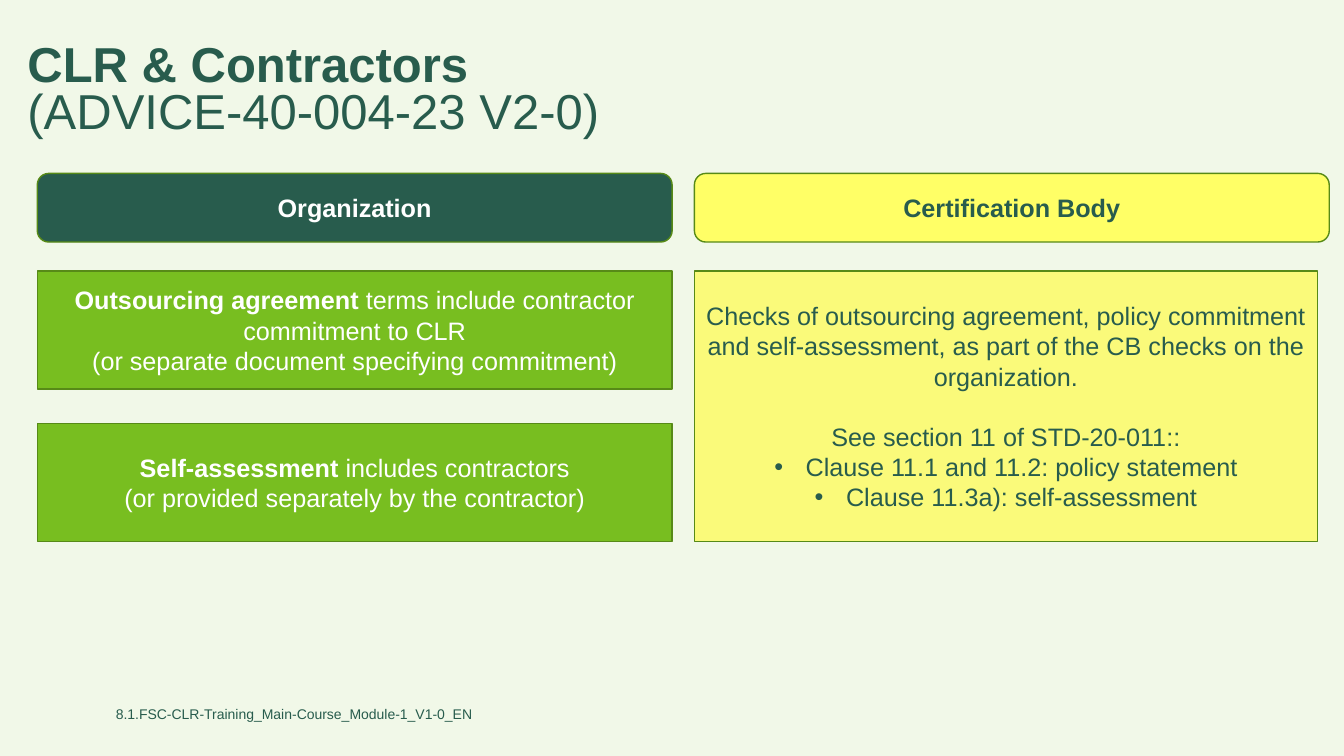
from dataclasses import dataclass

from lxml import etree
from pptx import Presentation
from pptx.dml.color import RGBColor
from pptx.enum.shapes import MSO_SHAPE
from pptx.enum.text import MSO_ANCHOR, MSO_AUTO_SIZE, PP_ALIGN
from pptx.oxml.ns import qn
from pptx.util import Cm, Pt

RECT, ROUNDED = MSO_SHAPE.RECTANGLE, MSO_SHAPE.ROUNDED_RECTANGLE
LEFT, CENTER = PP_ALIGN.LEFT, PP_ALIGN.CENTER
TOP, MIDDLE = MSO_ANCHOR.TOP, MSO_ANCHOR.MIDDLE
NO_AUTOFIT = MSO_AUTO_SIZE.NONE


@dataclass(frozen=True)
class Theme:
    font: str = "Arial"
    background: str = "F1F8E8"
    dark: str = "285C4D"
    white: str = "FFFFFF"
    green: str = "78BE20"
    yellow: str = "FFFF66"
    pale_yellow: str = "FAFA7A"
    outline: str = "578A17"
    title_size: float = 35
    body_size: float = 18
    footer_size: float = 10


@dataclass(frozen=True)
class Run:
    text: str
    bold: bool = False
    new_line: bool = False


@dataclass(frozen=True)
class Para:
    runs: tuple[Run, ...]
    bullet: bool = False
    space_before: float = 0


@dataclass(frozen=True)
class Box:
    kind: MSO_SHAPE
    left: float
    top: float
    height: float
    fill: str
    color: str
    paras: tuple[Para, ...]


THEME = Theme()

# Grid in centimetres
LEFT_COL, RIGHT_COL = 0.94, 17.5
COL_W, CHECKS_W = 16, 15.7
HEADER_TOP, HEADER_H = 4.37, 1.73
ROW_TOP, ROW_H, ROW_PITCH = 6.83, 2.97, 3.84
HANG = 0.79

TITLE = (Para((Run("CLR & Contractors", bold=True),
               Run("(ADVICE-40-004-23 V2-0)", new_line=True))),)
FOOTER = (Para((Run("8.1.FSC-CLR-Training_Main-Course_Module-1_V1-0_EN"),)),)

HEADERS = (
    Box(ROUNDED, LEFT_COL, HEADER_TOP, HEADER_H, THEME.dark, THEME.white,
        (Para((Run("Organization", bold=True),)),)),
    Box(ROUNDED, RIGHT_COL, HEADER_TOP, HEADER_H, THEME.yellow, THEME.dark,
        (Para((Run("Certification Body", bold=True),)),)),
)

DUTIES = (
    (Para((Run("Outsourcing agreement ", bold=True),
           Run("terms include contractor commitment to CLR"))),
     Para((Run("(or separate document specifying commitment)"),))),
    (Para((Run("Self-assessment", bold=True),
           Run(" includes contractors"),
           Run("(or provided separately by the contractor)", new_line=True))),),
)
DUTY_BOXES = tuple(
    Box(RECT, LEFT_COL, ROW_TOP + i * ROW_PITCH, ROW_H, THEME.green, THEME.white, paras)
    for i, paras in enumerate(DUTIES)
)

CHECKS = (
    Para((Run("Checks of outsourcing agreement, policy commitment and self-assessment, "
              "as part of the CB checks on the organization."),)),
    Para((Run("See section 11 of STD-20-011::"),), space_before=21.6),
    Para((Run("Clause 11.1 and 11.2: policy statement"),), bullet=True),
    Para((Run("Clause 11.3a): self-assessment"),), bullet=True),
)


def rgb(color: str) -> RGBColor:
    return RGBColor.from_string(color)


def place(sp, left: float, top: float, width: float, height: float) -> None:
    sp.left, sp.top, sp.width, sp.height = Cm(left), Cm(top), Cm(width), Cm(height)


def paint(sp, fill: str) -> None:
    sp.fill.solid()
    sp.fill.fore_color.rgb = rgb(fill)
    sp.line.color.rgb = rgb(THEME.outline)
    sp.line.width = Pt(1)


def set_bullet(p, bullet: bool, color: str) -> None:
    """Give the paragraph a hanging bullet, or clear any inherited one."""
    pPr = p._p.get_or_add_pPr()
    indent = Cm(HANG) if bullet else 0
    pPr.set("marL", str(indent))
    pPr.set("indent", str(-indent))
    if bullet:
        clr = etree.SubElement(pPr, qn("a:buClr"))
        etree.SubElement(clr, qn("a:srgbClr"), val=color)
        etree.SubElement(pPr, qn("a:buFont"), typeface=THEME.font)
        etree.SubElement(pPr, qn("a:buChar"), char="•")
    else:
        etree.SubElement(pPr, qn("a:buNone"))


def add_break(p, size: float) -> None:
    """Add a line break that keeps the type size of its line."""
    p.add_line_break()
    etree.SubElement(p._p[-1], qn("a:rPr"), sz=str(int(size * 100)))


def write(tf, paras: tuple[Para, ...], size: float, color: str, align: PP_ALIGN = CENTER,
          anchor: MSO_ANCHOR = MIDDLE, inset: tuple[float, float] = (0.25, 0.13),
          line_spacing: float = 1.0) -> None:
    tf.word_wrap = True
    tf.auto_size = NO_AUTOFIT
    tf.vertical_anchor = anchor
    tf.margin_left = tf.margin_right = Cm(inset[0])
    tf.margin_top = tf.margin_bottom = Cm(inset[1])
    for i, para in enumerate(paras):
        p = tf.add_paragraph() if i else tf.paragraphs[0]
        set_bullet(p, para.bullet, color)
        p.alignment = align
        p.line_spacing = line_spacing
        p.space_before = Pt(para.space_before)
        p.space_after = Pt(0)
        for run in para.runs:
            if run.new_line:
                add_break(p, size)
            r = p.add_run()
            r.text = run.text
            r.font.name = THEME.font
            r.font.size = Pt(size)
            r.font.bold = run.bold
            r.font.color.rgb = rgb(color)


def add_box(s, box: Box) -> None:
    sp = s.shapes.add_shape(box.kind, Cm(box.left), Cm(box.top), Cm(COL_W), Cm(box.height))
    sp.shadow.inherit = False
    paint(sp, box.fill)
    write(sp.text_frame, box.paras, THEME.body_size, box.color)


def main() -> None:
    prs = Presentation()
    prs.slide_width, prs.slide_height = Cm(33.87), Cm(19.05)
    s = prs.slides.add_slide(prs.slide_layouts[1])
    s.background.fill.solid()
    s.background.fill.fore_color.rgb = rgb(THEME.background)

    title, checks = s.shapes.title, s.placeholders[1]
    place(title, 0.69, 1.12, 28, 1.02)
    write(title.text_frame, TITLE, THEME.title_size, THEME.dark, LEFT, TOP, (0, 0), 0.8)

    for box in HEADERS + DUTY_BOXES:
        add_box(s, box)

    place(checks, RIGHT_COL, ROW_TOP, CHECKS_W, ROW_PITCH + ROW_H)
    paint(checks, THEME.pale_yellow)
    write(checks.text_frame, CHECKS, THEME.body_size, THEME.dark)

    footer = s.shapes.add_textbox(Cm(2.92), Cm(17.48), Cm(21.97), Cm(1.02))
    write(footer.text_frame, FOOTER, THEME.footer_size, THEME.dark, LEFT, inset=(0, 0))
    prs.save("out.pptx")


if __name__ == "__main__":
    main()
